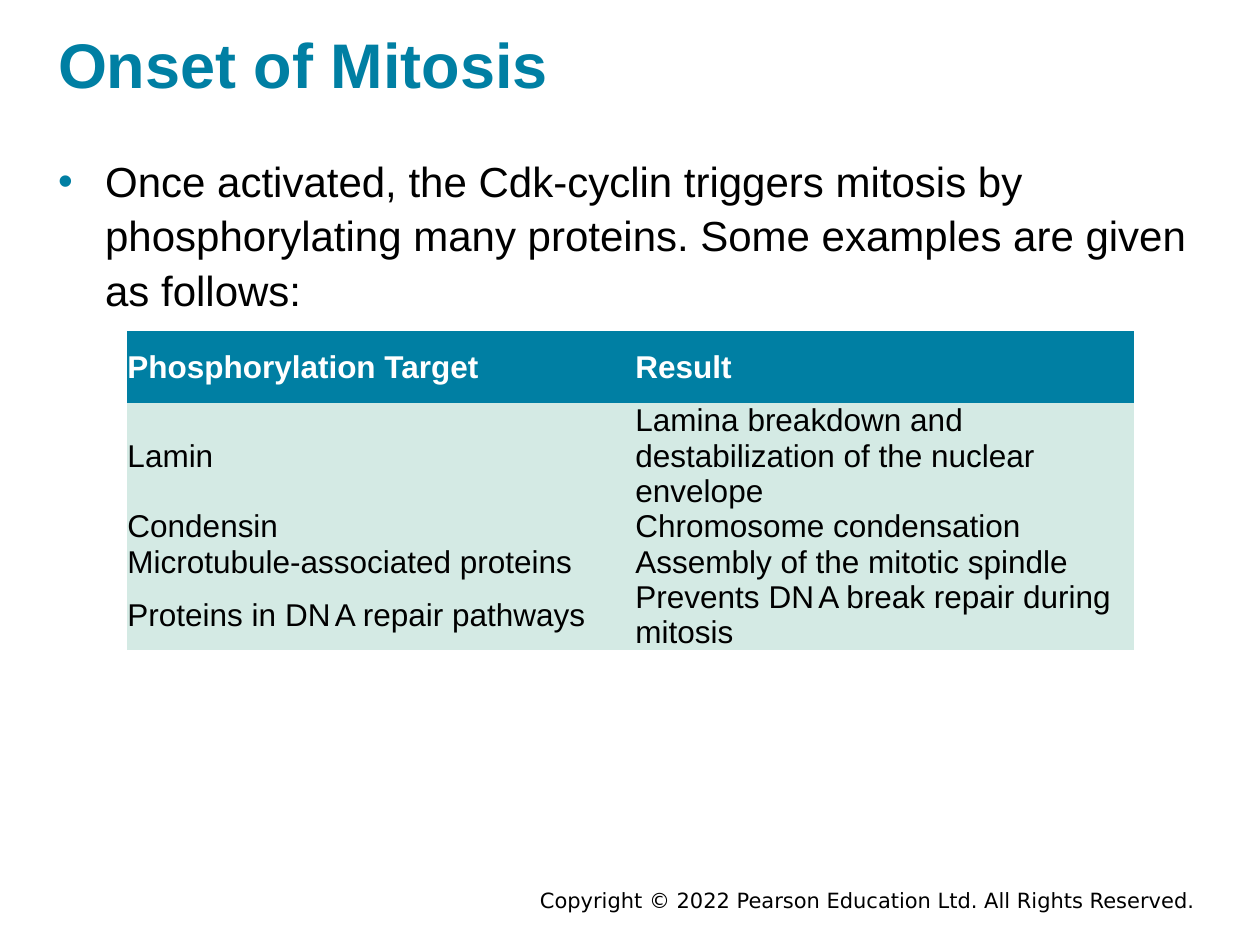
from lxml import etree
from pptx import Presentation
from pptx.dml.color import RGBColor
from pptx.enum.text import MSO_ANCHOR, MSO_AUTO_SIZE, PP_ALIGN
from pptx.oxml.ns import qn
from pptx.util import Cm, Pt

MIDDLE, TOP = MSO_ANCHOR.MIDDLE, MSO_ANCHOR.TOP
LEFT, RIGHT = PP_ALIGN.LEFT, PP_ALIGN.RIGHT
NO_AUTOFIT = MSO_AUTO_SIZE.NONE

COLORS = {"teal": "007FA3", "mint": "D4EAE4", "black": "000000", "white": "FFFFFF"}
NO_STYLE_NO_GRID = "{2D5ABB26-0587-4C30-8999-92F81FD0307C}"
SPACED_LETTERS = "D N "

ROWS = [
    ("Phosphorylation Target", "Result"),
    ("Lamin", "Lamina breakdown and destabilization of the nuclear envelope"),
    ("Condensin", "Chromosome condensation"),
    ("Microtubule-associated proteins", "Assembly of the mitotic spindle"),
    ("Proteins in D N A repair pathways", "Prevents D N A break repair during mitosis"),
]


class SlideBuilder:
    font_name = "Arial"

    def __init__(self, slide):
        self.slide = slide

    def color(self, name):
        return RGBColor.from_string(COLORS[name])

    def format(self, paragraph, size, color, bold=False, font_name=None):
        font = paragraph.font
        font.name = font_name or self.font_name
        font.size = Pt(size)
        font.bold = bold
        font.color.rgb = self.color(color)

    def place(self, shape, left, top, width, height, anchor):
        shape.left, shape.top = Cm(left), Cm(top)
        shape.width, shape.height = Cm(width), Cm(height)
        frame = shape.text_frame
        frame.auto_size = NO_AUTOFIT
        frame.word_wrap = True
        frame.vertical_anchor = anchor
        frame.margin_left = frame.margin_right = 0
        frame.margin_top = frame.margin_bottom = 0
        return frame

    def title(self, text, *box):
        frame = self.place(self.slide.shapes.title, *box, MIDDLE)
        frame.text = text
        paragraph = frame.paragraphs[0]
        paragraph.alignment = LEFT
        self.format(paragraph, 36, "teal", bold=True)

    def bullet(self, text, *box):
        frame = self.place(self.slide.placeholders[1], *box, TOP)
        frame.text = text
        paragraph = frame.paragraphs[0]
        properties = paragraph._p.get_or_add_pPr()
        properties.set("marL", str(Cm(0.95)))
        properties.set("indent", str(Cm(-0.95)))
        bullet_color = etree.SubElement(properties, qn("a:buClr"))
        etree.SubElement(bullet_color, qn("a:srgbClr"), val=COLORS["teal"])
        etree.SubElement(properties, qn("a:buFont"), typeface=self.font_name)
        etree.SubElement(properties, qn("a:buChar"), char="•")
        paragraph.space_before = Pt(0)
        paragraph.line_spacing = 1.08
        self.format(paragraph, 24, "black")

    def cell(self, cell, text, fill, color, bold):
        cell.fill.solid()
        cell.fill.fore_color.rgb = self.color(fill)
        cell.vertical_anchor = MIDDLE
        cell.margin_left = cell.margin_right = 0
        cell.margin_top = cell.margin_bottom = 0
        paragraph = cell.text_frame.paragraphs[0]
        before, letters, after = text.partition(SPACED_LETTERS)
        for part in filter(None, (before, letters, after)):
            run = paragraph.add_run()
            run.text = part
            if part == SPACED_LETTERS:
                run._r.get_or_add_rPr().set("spc", "-250")
        self.format(paragraph, 18, color, bold)

    def table(self, rows, left, top, column_widths, header_height, row_height):
        heights = [header_height] + [row_height] * (len(rows) - 1)
        table = self.slide.shapes.add_table(
            len(rows), len(column_widths), Cm(left), Cm(top),
            Cm(sum(column_widths)), Cm(sum(heights))).table
        table._tbl.tblPr.find(qn("a:tableStyleId")).text = NO_STYLE_NO_GRID
        table.horz_banding = False
        for column, width in zip(table.columns, column_widths):
            column.width = Cm(width)
        for index, (row, height, texts) in enumerate(zip(table.rows, heights, rows)):
            row.height = Cm(height)
            look = ("mint", "black", False) if index else ("teal", "white", True)
            for cell, text in zip(row.cells, texts):
                self.cell(cell, text, *look)

    def footer(self, text, *box):
        shape = self.slide.shapes.add_textbox(0, 0, 0, 0)
        frame = self.place(shape, *box, MIDDLE)
        frame.margin_left = frame.margin_right = Cm(0.25)
        frame.text = text
        paragraph = frame.paragraphs[0]
        paragraph.alignment = RIGHT
        self.format(paragraph, 12, "black", font_name="DejaVu Sans")


def main():
    presentation = Presentation()
    presentation.slide_width, presentation.slide_height = Cm(25.4), Cm(19.05)
    slide = presentation.slides.add_slide(presentation.slide_layouts[1])
    builder = SlideBuilder(slide)
    builder.footer("Copyright © 2022 Pearson Education Ltd. All Rights Reserved.",
                   4.45, 17.86, 19.89, 0.56)
    builder.title("Onset of Mitosis", 1.17, 0.25, 22.96, 2.06)
    builder.bullet("Once activated, the Cdk-cyclin triggers mitosis by phosphorylating "
                   "many proteins. Some examples are given as follows:",
                   1.17, 3.05, 22.96, 3.23)
    builder.table(ROWS, 2.57, 6.68, (10.24, 10.06), 1.45, 0.61)
    presentation.save("out.pptx")


if __name__ == "__main__":
    main()
